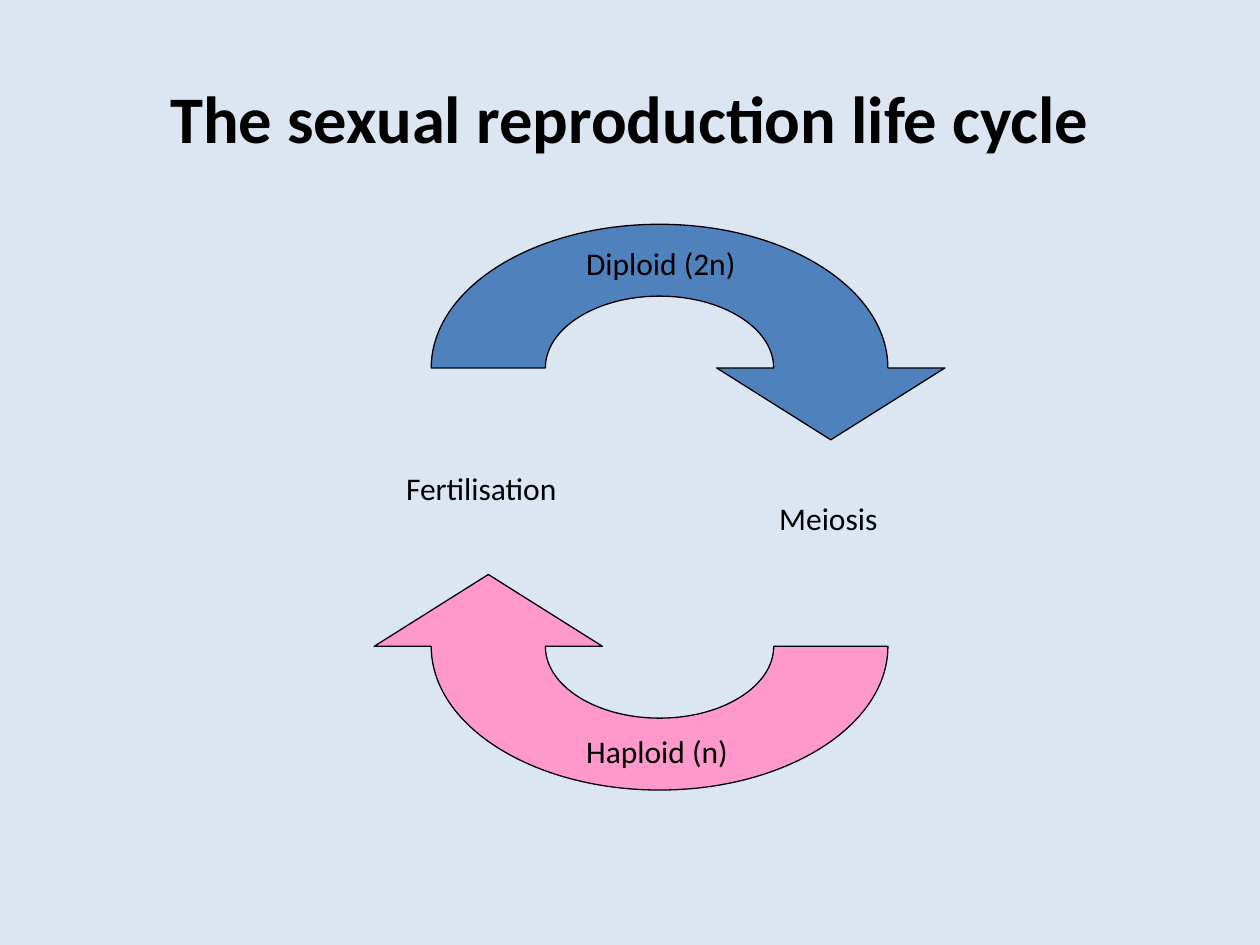
from pptx import Presentation
from pptx.dml.color import RGBColor
from pptx.enum import text
from pptx.oxml.ns import qn
from pptx.util import Inches, Pt

FONT = "Calibri"
BLACK = "000000"
KAPPA = 0.5523  # control distance of a quarter circle


def rgb(value):
    return RGBColor.from_string(value)


def add_text(s, box, wording, size, bold=False):
    sp = s.shapes.add_textbox(*map(Inches, box))
    tf = sp.text_frame
    tf.word_wrap = True
    tf.vertical_anchor = text.MSO_ANCHOR.MIDDLE
    p = tf.paragraphs[0]
    p.text = wording
    p.alignment = text.PP_ALIGN.CENTER
    p.font.name, p.font.size, p.font.bold = FONT, Pt(size), bold
    p.font.color.rgb = rgb(BLACK)


def half_circle(r):
    """Bezier points of an upper half circle that starts at (r, 0)."""
    k = abs(r) * KAPPA
    side = k if r > 0 else -k
    return [(r, -k), (side, -abs(r)), (0, -abs(r)),
            (-side, -abs(r)), (-r, -k), (-r, 0)]


def bend_lines(sp, first):
    """Turn the six line segments from index first into two Bezier curves."""
    lines = sp.element.findall(".//" + qn("a:lnTo"))[first:first + 6]
    for start in (0, 3):
        curve, *others = lines[start:start + 3]
        curve.tag = qn("a:cubicBezTo")
        for line in others:
            curve.append(line[0])
            line.getparent().remove(line)


def add_curved_arrow(s, centre, radii, fill, turn=1):
    """Half-ring arrow around centre; turn=-1 rotates it by 180 degrees."""
    outline = [(0.5, 0), *half_circle(0.5), (-1, 0), *half_circle(-1),
               (1.25, 0), (0.75, 0.5), (0.25, 0)]
    points = [tuple(Inches(c + turn * r * v) for c, r, v in zip(centre, radii, pt))
              for pt in outline]
    builder = s.shapes.build_freeform(*points[0])
    builder.add_line_segments(points[1:], close=True)
    sp = builder.convert_to_shape()
    bend_lines(sp, 7)
    bend_lines(sp, 0)
    sp.shadow.inherit = False
    sp.fill.solid()
    sp.fill.fore_color.rgb = rgb(fill)
    sp.line.color.rgb = rgb(BLACK)
    sp.line.width = Pt(0.75)


def add_life_cycle(s, left, top, width, height):
    radii = (width * 0.4, height * 0.254)
    cx = left + width / 2
    add_curved_arrow(s, (cx, top + radii[1]), radii, "4F81BD")
    add_curved_arrow(s, (cx, top + height - radii[1]), radii, "FF99CC", turn=-1)

    labels = [
        ("Meiosis", 2.74, 2.13, 1.73),
        ("Fertilisation", -0.25, 1.89, 2.2),
        ("Haploid (n)", 1.43, 3.98, 1.63),
        ("Diploid (2n)", 1.46, 0.11, 1.63),
    ]
    for wording, dx, dy, label_width in labels:
        add_text(s, (left + dx, top + dy, label_width, 0.4), wording, 18)


def main():
    prs = Presentation()
    prs.slide_width, prs.slide_height = Inches(10), Inches(7.5)
    s = prs.slides.add_slide(prs.slide_layouts[6])
    s.background.fill.solid()
    s.background.fill.fore_color.rgb = rgb("DCE6F2")
    add_text(s, (0.5, 0.3, 9, 1.25), "The sexual reproduction life cycle", 38, bold=True)
    add_life_cycle(s, 2.97, 1.78, 4.53, 4.49)
    prs.save("out.pptx")


if __name__ == "__main__":
    main()
